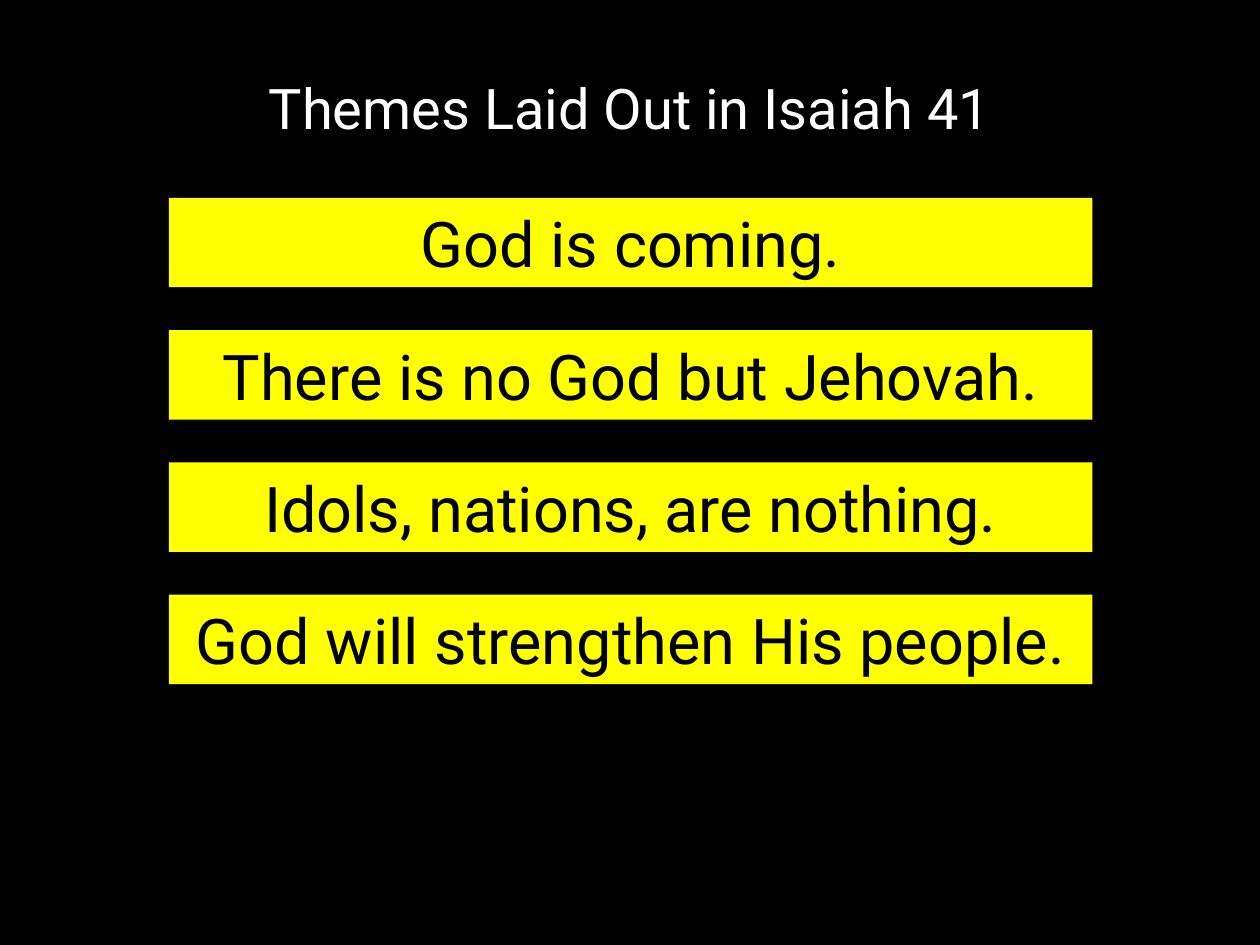
from dataclasses import dataclass

from pptx import Presentation
from pptx.dml.color import RGBColor
from pptx.enum.shapes import MSO_SHAPE
from pptx.enum.text import MSO_ANCHOR, MSO_AUTO_SIZE, PP_ALIGN
from pptx.slide import Slide
from pptx.text.text import TextFrame
from pptx.util import Inches, Pt

FONT = "Roboto"
BLACK, WHITE, YELLOW = "000000", "FFFFFF", "FFFF00"
BAR_LEFT, BAR_WIDTH, BAR_HEIGHT = 1.34, 7.33, 0.71
FIRST_TOP, BAR_STEP = 1.57, 1.05


@dataclass
class Theme:
    text: str
    top: float


THEMES = [
    Theme(text, FIRST_TOP + i * BAR_STEP)
    for i, text in enumerate([
        "God is coming.",
        "There is no God but Jehovah.",
        "Idols, nations, are nothing.",
        "God will strengthen His people.",
    ])
]


def set_fill(fill, color: str) -> None:
    fill.solid()
    fill.fore_color.rgb = RGBColor.from_string(color)


def set_text(tf: TextFrame, text: str, size: int, color: str) -> None:
    """Write one centred line of formatted text."""
    tf.text = text
    tf.word_wrap = True
    tf.vertical_anchor = MSO_ANCHOR.MIDDLE
    p = tf.paragraphs[0]
    p.alignment = PP_ALIGN.CENTER
    font = p.runs[0].font
    font.name, font.size = FONT, Pt(size)
    set_fill(font.fill, color)


def add_title(s: Slide, text: str) -> None:
    title = s.shapes.title
    title.left, title.top = Inches(0.69), Inches(0.55)
    title.width, title.height = Inches(8.62), Inches(0.67)
    set_text(title.text_frame, text, 32, WHITE)
    title.text_frame.auto_size = MSO_AUTO_SIZE.NONE
    title.text_frame.paragraphs[0].line_spacing = 0.9


def add_theme_bar(s: Slide, theme: Theme) -> None:
    bar = s.shapes.add_shape(
        MSO_SHAPE.RECTANGLE, Inches(BAR_LEFT), Inches(theme.top),
        Inches(BAR_WIDTH), Inches(BAR_HEIGHT))
    bar.shadow.inherit = False
    set_fill(bar.fill, YELLOW)
    bar.line.fill.background()
    set_text(bar.text_frame, theme.text, 36, BLACK)
    bar.text_frame.auto_size = MSO_AUTO_SIZE.SHAPE_TO_FIT_TEXT


def main() -> None:
    prs = Presentation()
    prs.slide_width, prs.slide_height = Inches(10), Inches(7.5)
    s = prs.slides.add_slide(prs.slide_layouts[5])
    set_fill(s.background.fill, BLACK)
    add_title(s, "Themes Laid Out in Isaiah 41")
    for theme in THEMES:
        add_theme_bar(s, theme)
    prs.save("out.pptx")


if __name__ == "__main__":
    main()
